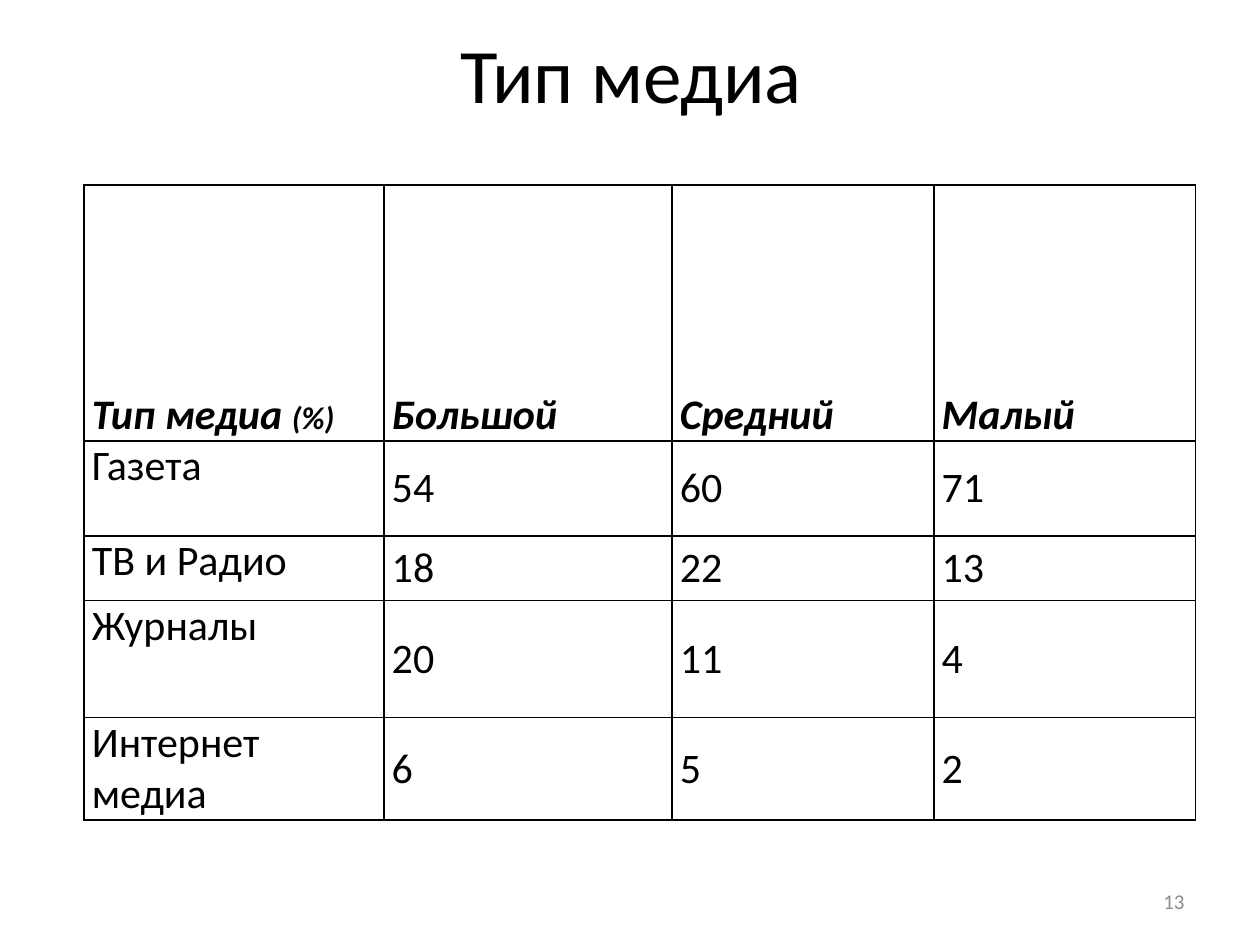
import pptx
import pptx.util
import pptx.dml.color
import pptx.enum.text
import pptx.oxml

Pt = pptx.util.Pt
ALIGN = pptx.enum.text.PP_ALIGN
ANCHOR = pptx.enum.text.MSO_ANCHOR

TITLE = "Тип медиа"
NUMBER = "13"
HEADS = ["Тип медиа ", "Большой", "Средний", "Малый"]
UNIT = "(%)"
ROWS = [
    ("Газета", 54, 60, 71),
    ("ТВ и Радио", 18, 22, 13),
    ("Журналы", 20, 11, 4),
    ("Интернет медиа", 6, 5, 2),
]
WIDTHS = [171.4, 164.6, 149.7, 149.4]
HEIGHTS = [146.3, 54.4, 36.9, 66.9, 58.6]
LEFT, TOP = 48, 105.6

BODY = {"name": "Calibri", "size": Pt(24), "bold": False, "italic": False}
HEAD = {**BODY, "bold": True, "italic": True}
SMALL = {**HEAD, "size": Pt(18)}
LARGE = {**BODY, "size": Pt(44)}
PAGE = {**BODY, "size": Pt(12)}
INSETS = {"margin_left": Pt(4.5), "margin_right": Pt(4.5),
          "margin_top": 0, "margin_bottom": 0}


def paint(target, color):
    target.rgb = pptx.dml.color.RGBColor.from_string(color)


def assign(target, values):
    for key, value in values.items():
        setattr(target, key, value)


def write(para, text, style, align, color="000000"):
    run = para.add_run()
    run.text = text
    assign(run.font, style)
    paint(run.font.color, color)
    para.alignment = align


def outline(cell):
    """Draw a thin black border on all four sides of a cell."""
    props = cell._tc.get_or_add_tcPr()
    for spot, side in enumerate("LRTB"):
        props.insert(spot, pptx.oxml.parse_xml(
            f'<a:ln{side} w="12700" xmlns:a='
            '"http://schemas.openxmlformats.org/drawingml/2006/main">'
            '<a:solidFill><a:srgbClr val="000000"/></a:solidFill>'
            f'</a:ln{side}>'))


def add_grid(slide):
    rows = [HEADS, *ROWS]
    table = slide.shapes.add_table(
        len(rows), len(HEADS), Pt(LEFT), Pt(TOP),
        Pt(sum(WIDTHS)), Pt(sum(HEIGHTS))).table
    for col, width in zip(table.columns, WIDTHS):
        col.width = Pt(width)
    for row, height in zip(table.rows, HEIGHTS):
        row.height = Pt(height)
    for r, row in enumerate(rows):
        for c, value in enumerate(row):
            cell = table.cell(r, c)
            assign(cell, INSETS)
            cell.vertical_anchor = (ANCHOR.BOTTOM if r == 0 else
                                    ANCHOR.TOP if c == 0 else ANCHOR.MIDDLE)
            cell.fill.solid()
            paint(cell.fill.fore_color, "FFFFFF")
            outline(cell)
            write(cell.text_frame.paragraphs[0], str(value),
                  BODY if r else HEAD, ALIGN.JUSTIFY)
    write(table.cell(0, 0).text_frame.paragraphs[0], UNIT, SMALL, ALIGN.JUSTIFY)


def main():
    deck = pptx.Presentation()
    assign(deck, {"slide_width": Pt(720), "slide_height": Pt(540)})
    slide = deck.slides.add_slide(deck.slide_layouts[5])

    title = slide.shapes.title
    assign(title, {"left": Pt(36.7), "top": Pt(9.4),
                   "width": Pt(648), "height": Pt(90)})
    assign(title.text_frame, {"vertical_anchor": ANCHOR.TOP,
                              "margin_top": Pt(6)})
    write(title.text_frame.paragraphs[0], TITLE, LARGE, ALIGN.CENTER)

    add_grid(slide)

    page = slide.shapes.add_textbox(Pt(516), Pt(500.5), Pt(168), Pt(28.8))
    assign(page.text_frame, {"word_wrap": True,
                             "vertical_anchor": ANCHOR.MIDDLE})
    write(page.text_frame.paragraphs[0], NUMBER, PAGE, ALIGN.RIGHT, "8C8C8C")
    deck.save("out.pptx")


if __name__ == "__main__":
    main()
